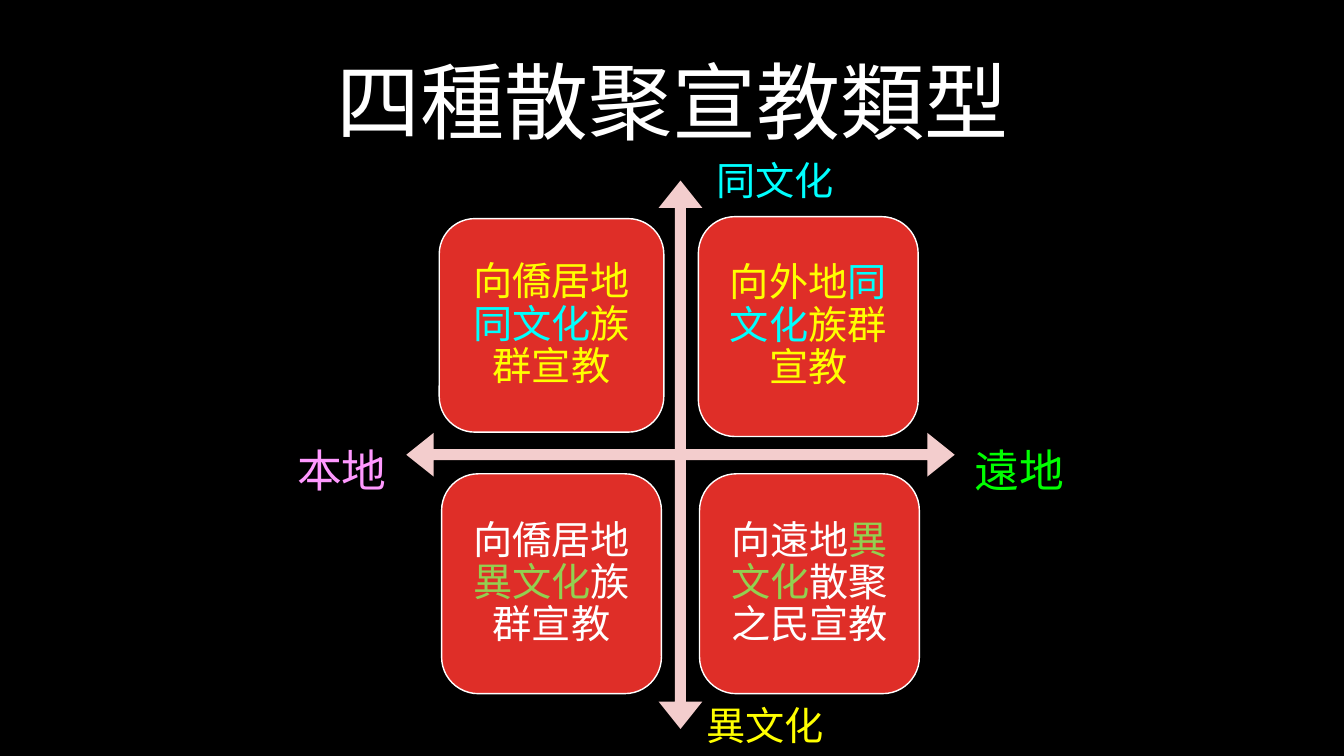
from dataclasses import dataclass

from lxml import etree
from pptx import Presentation
from pptx.dml.color import RGBColor
from pptx.enum.shapes import MSO_SHAPE
from pptx.enum.text import MSO_ANCHOR, MSO_AUTO_SIZE, PP_ALIGN
from pptx.oxml.ns import qn
from pptx.util import Cm, Pt

CENTER, LEFT = PP_ALIGN.CENTER, PP_ALIGN.LEFT
MIDDLE, TOP = MSO_ANCHOR.MIDDLE, MSO_ANCHOR.TOP
GROW = MSO_AUTO_SIZE.SHAPE_TO_FIT_TEXT
CARD, CROSS = MSO_SHAPE.ROUNDED_RECTANGLE, MSO_SHAPE.QUAD_ARROW


@dataclass(frozen=True)
class Theme:
    """Hold the colours, fonts and type sizes."""
    back: str = "000000"
    white: str = "FFFFFF"
    red: str = "DF2E28"
    rose: str = "F3CDCD"
    yellow: str = "FFFF00"
    cyan: str = "00FFFF"
    lime: str = "92D050"
    pink: str = "FF99FF"
    green: str = "00FF00"
    head: str = "Noto Sans CJK SC"
    body: str = "Lato"
    big: int = 60
    mid: int = 32
    small: int = 28


THEME = Theme()


def tint(fill, color):
    """Make a fill solid in one colour."""
    fill.solid()
    fill.fore_color.rgb = RGBColor.from_string(color)


def apply(item, form):
    """Set each format value on an item."""
    for name, value in form.items():
        setattr(item, name, value)


def write(shape, runs, size, face, form, para):
    """Write coloured runs as one paragraph."""
    frame = shape.text_frame
    apply(frame, form)
    line = frame.paragraphs[0]
    apply(line, para)
    for text, color in runs:
        run = line.add_run()
        run.text = text
        apply(run.font, {"size": Pt(size), "name": face})
        tint(run.font.fill, color)
        if face == THEME.head:
            east = etree.SubElement(run.font._element, qn("a:ea"))
            east.set("typeface", face)


def draw_shape(group, kind, box, color):
    """Draw a filled shape without outline or shadow."""
    shape = group.shapes.add_shape(kind, *map(Cm, box))
    shape.shadow.inherit = False
    tint(shape.fill, color)
    shape.line.fill.background()
    return shape


def draw_title(slide, box, text):
    """Draw the heading centred in its box."""
    shape = slide.shapes.add_textbox(*map(Cm, box))
    write(shape, [(text, THEME.white)], THEME.big, THEME.head,
          {"word_wrap": True, "vertical_anchor": MIDDLE},
          {"alignment": CENTER, "line_spacing": 0.9})


def draw_card(group, box, runs):
    """Draw one rounded card with its text."""
    card = draw_shape(group, CARD, box, THEME.red)
    tint(card.line.fill, THEME.white)
    card.line.width = Pt(1)
    form = {f"margin_{side}": Cm(0.3)
            for side in ("left", "top", "right", "bottom")}
    form.update(word_wrap=True, vertical_anchor=MIDDLE)
    write(card, runs, THEME.small, THEME.body, form,
          {"alignment": CENTER, "line_spacing": 0.9})


def draw_matrix(slide, box):
    """Draw the cross of arrows and the four cards around it."""
    left, top, *_ = box
    group = slide.shapes.add_group_shape()
    cross = draw_shape(group, CROSS, box, THEME.rose)
    for index, value in enumerate((0.02, 0.04, 0.05)):
        cross.adjustments[index] = value
    side = 5.54
    cards = (
        (0.83, 0.96, 5.66, 5.38, THEME.yellow, THEME.cyan,
         ("向僑居地", "同文化", "族群宣教")),
        (7.36, 0.91, side, side, THEME.yellow, THEME.cyan,
         ("向外地", "同文化", "族群宣教")),
        (0.89, 7.39, side, side, THEME.white, THEME.lime,
         ("向僑居地", "異文化", "族群宣教")),
        (7.39, 7.39, side, side, THEME.white, THEME.lime,
         ("向遠地", "異文化", "散聚之民宣教")),
    )
    for dx, dy, wide, high, base, accent, parts in cards:
        draw_card(group, (left + dx, top + dy, wide, high),
                  zip(parts, (base, accent, base)))


def draw_labels(slide, box):
    """Name the four ends of the cross."""
    left, top, *_ = box
    labels = (
        ("本地", -3.0, 6.47, 2.79, 1.63, THEME.mid, THEME.pink),
        ("遠地", 14.07, 6.47, 2.79, 1.63, THEME.mid, THEME.green),
        ("同文化", 7.56, -0.74, 3.5, 1.45, THEME.small, THEME.cyan),
        ("異文化", 7.31, 13.0, 3.5, 1.45, THEME.small, THEME.yellow),
    )
    for text, dx, dy, wide, high, size, color in labels:
        spot = (left + dx, top + dy, wide, high)
        shape = slide.shapes.add_textbox(*map(Cm, spot))
        write(shape, [(text, color)], size, THEME.body,
              {"word_wrap": False, "auto_size": GROW, "vertical_anchor": TOP},
              {"alignment": LEFT})


def main():
    """Build the slide and save it."""
    deck = Presentation()
    apply(deck, {"slide_width": Cm(33.87), "slide_height": Cm(19.05)})
    slide = deck.slides.add_slide(deck.slide_layouts[6])
    tint(slide.background.fill, THEME.back)
    draw_title(slide, (4.98, 0.89, 23.93, 3.58), "四種散聚宣教類型")
    field = (10.24, 4.55, 13.82, 13.82)
    draw_matrix(slide, field)
    draw_labels(slide, field)
    deck.save("out.pptx")


if __name__ == "__main__":
    main()
